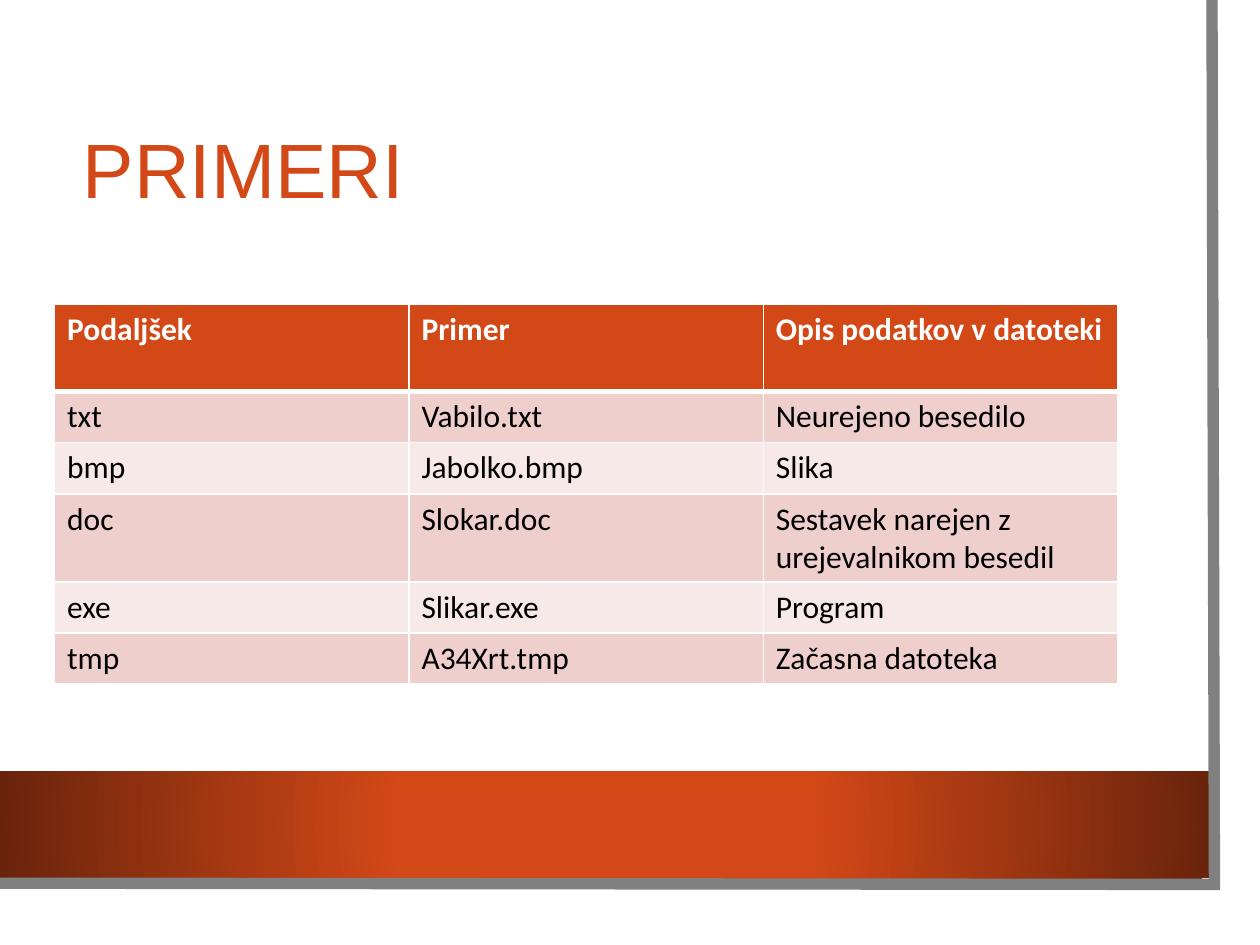
from lxml.etree import SubElement
from pptx import Presentation
from pptx.dml.color import RGBColor
from pptx.enum.shapes import MSO_SHAPE
from pptx.enum.text import MSO_ANCHOR
from pptx.oxml import parse_xml
from pptx.oxml.ns import nsdecls, qn
from pptx.util import Pt

WHITE = RGBColor(0xFF, 0xFF, 0xFF)
BLACK = RGBColor(0, 0, 0)
GRAY = RGBColor(0x80, 0x80, 0x80)
ORANGE = RGBColor(0xD3, 0x48, 0x17)
BROWN = RGBColor(0x69, 0x24, 0x0C)
PINK = RGBColor(0xEF, 0xCF, 0xCC)
PALE_PINK = RGBColor(0xF7, 0xE9, 0xE8)

ROWS = [
    ("Podaljšek", "Primer", "Opis podatkov v datoteki"),
    ("txt", "Vabilo.txt", "Neurejeno besedilo"),
    ("bmp", "Jabolko.bmp", "Slika"),
    ("doc", "Slokar.doc", "Sestavek narejen z urejevalnikom besedil"),
    ("exe", "Slikar.exe", "Program"),
    ("tmp", "A34Xrt.tmp", "Začasna datoteka"),
]
ROW_HEIGHTS = [50, 29.2, 29.2, 50.4, 29.2, 29.2]
COLUMN_WIDTH = 202.5


def add_border(cell, side, width):
    line = SubElement(cell._tc.get_or_add_tcPr(), qn(f"a:{side}"), w=str(Pt(width)))
    fill = SubElement(line, qn("a:solidFill"))
    SubElement(fill, qn("a:srgbClr"), val=str(WHITE))


presentation = Presentation()
presentation.slide_width = Pt(720)
presentation.slide_height = Pt(540)
slide = presentation.slides.add_slide(presentation.slide_layouts[6])

page = slide.shapes.add_shape(MSO_SHAPE.RECTANGLE, 0, 0, Pt(707.8), Pt(523.4))
page.shadow.inherit = False
page.fill.solid()
page.fill.fore_color.rgb = WHITE
page.line.fill.background()

band = slide.shapes.add_shape(MSO_SHAPE.RECTANGLE, 0, Pt(440.6), Pt(691.2), Pt(61.2))
band.shadow.inherit = False
band.line.fill.background()
band.fill.gradient()
for stop, position, color in zip(band.fill.gradient_stops, (0.34, 1), (ORANGE, BROWN)):
    stop.position = position
    stop.color.rgb = color
gradient = band._element.spPr.find(qn("a:gradFill"))
gradient.remove(gradient.find(qn("a:lin")))
gradient.append(parse_xml(
    f'<a:path {nsdecls("a")} path="circle">'
    '<a:fillToRect l="50000" t="50000" r="50000" b="50000"/></a:path>'
))

builder = slide.shapes.build_freeform(Pt(692.6), 0)
builder.add_line_segments([(Pt(694), Pt(505.4)), (Pt(-1.4), Pt(504.7))], close=False)
edge = builder.convert_to_shape()
edge.shadow.inherit = False
edge.fill.background()
edge.line.color.rgb = GRAY
edge.line.width = Pt(6.5)
SubElement(edge.line._get_or_add_ln(), qn("a:miter"), lim="800000")

title = slide.shapes.add_textbox(Pt(40.3), Pt(54), Pt(614.2), Pt(90.7))
title.text_frame.word_wrap = True
title.text_frame.vertical_anchor = MSO_ANCHOR.MIDDLE
paragraph = title.text_frame.paragraphs[0]
paragraph.text = "PRIMERI"
paragraph.line_spacing = 0.9
paragraph.font.name = "Arial"
paragraph.font.size = Pt(44)
paragraph.font.color.rgb = ORANGE

table = slide.shapes.add_table(
    len(ROWS), len(ROWS[0]), Pt(31.2), Pt(173.8),
    Pt(COLUMN_WIDTH * len(ROWS[0])), Pt(sum(ROW_HEIGHTS)),
).table
for column in table.columns:
    column.width = Pt(COLUMN_WIDTH)
for row_index, (texts, height) in enumerate(zip(ROWS, ROW_HEIGHTS)):
    is_header = row_index == 0
    table.rows[row_index].height = Pt(height)
    for column_index, text in enumerate(texts):
        cell = table.cell(row_index, column_index)
        for side in ("lnL", "lnR", "lnT", "lnB"):
            is_header_rule = (row_index, side) in ((0, "lnB"), (1, "lnT"))
            add_border(cell, side, 3 if is_header_rule else 1)
        cell.fill.solid()
        cell.fill.fore_color.rgb = ORANGE if is_header else (PALE_PINK, PINK)[row_index % 2]
        paragraph = cell.text_frame.paragraphs[0]
        paragraph.text = text
        paragraph.font.name = "Calibri"
        paragraph.font.size = Pt(18)
        paragraph.font.bold = is_header
        paragraph.font.color.rgb = WHITE if is_header else BLACK

presentation.save("out.pptx")
